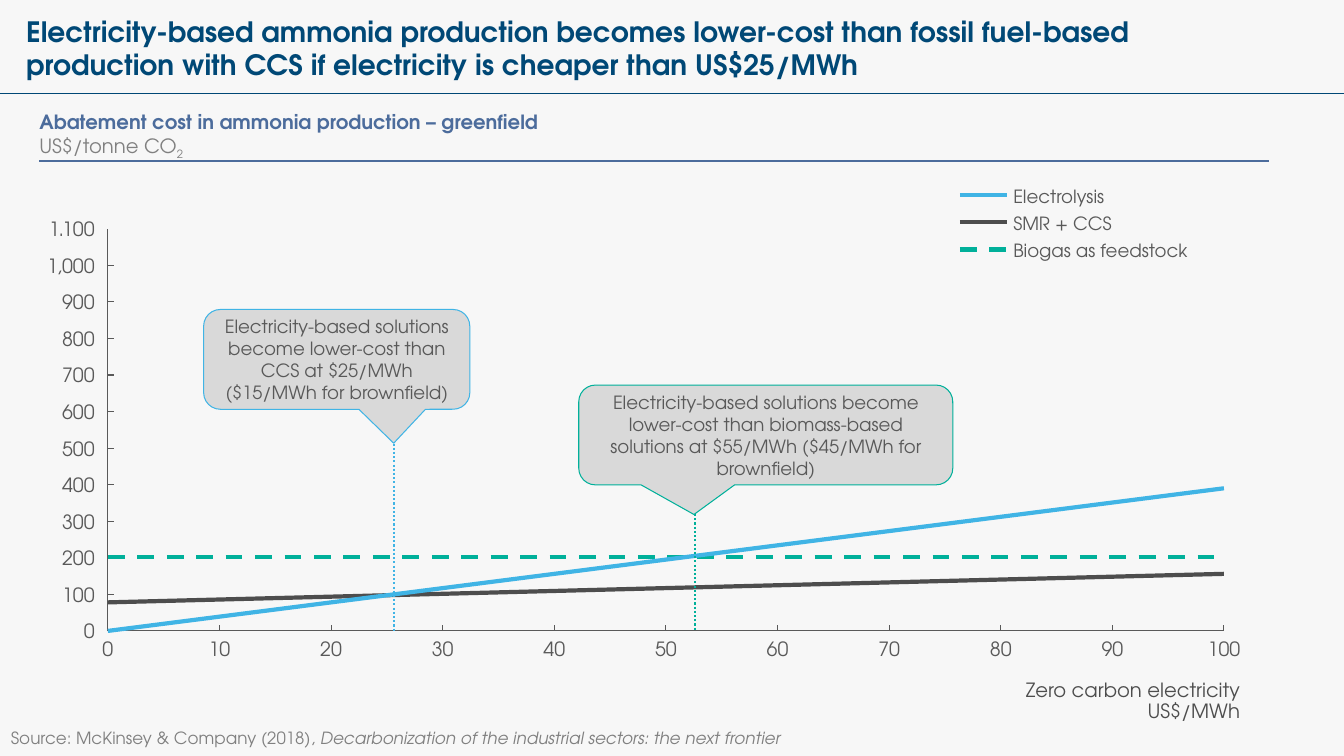
from lxml import etree
from pptx import Presentation
from pptx.chart.data import XyChartData
from pptx.dml.color import RGBColor
from pptx.enum.chart import XL_CHART_TYPE, XL_TICK_LABEL_POSITION, XL_TICK_MARK
from pptx.enum.dml import MSO_LINE
from pptx.enum.shapes import MSO_CONNECTOR, MSO_SHAPE
from pptx.enum.text import MSO_ANCHOR, MSO_AUTO_SIZE, PP_ALIGN
from pptx.oxml.ns import qn
from pptx.util import Pt

SCATTER = XL_CHART_TYPE.XY_SCATTER_LINES_NO_MARKERS
NO_LABELS = XL_TICK_LABEL_POSITION.NONE
TICK_INSIDE, TICK_NONE = XL_TICK_MARK.INSIDE, XL_TICK_MARK.NONE
DASH, DOTS = MSO_LINE.DASH, MSO_LINE.ROUND_DOT
STRAIGHT = MSO_CONNECTOR.STRAIGHT
CALLOUT = MSO_SHAPE.ROUNDED_RECTANGULAR_CALLOUT
TOP, MIDDLE, BOTTOM = MSO_ANCHOR.TOP, MSO_ANCHOR.MIDDLE, MSO_ANCHOR.BOTTOM
LEFT, CENTER, RIGHT = PP_ALIGN.LEFT, PP_ALIGN.CENTER, PP_ALIGN.RIGHT

EMU_PER_PX = 9144
FONT = "TeX Gyre Adventor"
NAVY, STEEL, GRAY, DARK, SILVER = "004876", "4C6C9C", "595959", "4D4D4D", "808080"
BLUE, GREEN = "40B4E5", "00B09A"
PLOT = (107, 227, 1107, 399)
AXIS_TOP = 282
COST_LABELS = ["0", "100", "200", "300", "400", "500", "600", "700", "800",
               "900", "1,000", "1.100"]
SERIES = [
    ("Electrolysis", BLUE, None, (0, 50, 100)),
    ("SMR + CCS", DARK, None, (20, 30, 40)),
    ("Biogas as feedstock", GREEN, DASH, (52, 52, 52)),
]
CALLOUTS = [
    ((202, 307, 264, 99), BLUE, 391, 440, (0.214, 0.84, 0.167),
     "Electricity-based solutions become lower-cost than CCS at $25/MWh "
     "($15/MWh for brownfield)"),
    ((574, 382, 371, 99), GREEN, 689, 510, (-0.192, 0.797, 0.167),
     "Electricity-based solutions become lower-cost than biomass-based "
     "solutions at $55/MWh ($45/MWh for brownfield)"),
]


def px(*lengths):
    return [round(length * EMU_PER_PX) for length in lengths]


def color(value):
    return RGBColor.from_string(value)


def style_line(line, value, width, dash=None):
    line.color.rgb = color(value)
    line.width = Pt(width)
    if dash:
        line.dash_style = dash


def add_line(slide, start, end, value, width, dash=None):
    connector = slide.shapes.add_connector(STRAIGHT, *px(*start, *end))
    style_line(connector.line, value, width, dash)
    etree.SubElement(connector._element.spPr, qn("a:effectLst"))


def add_run(paragraph, text, size, value, bold=False, italic=False):
    run = paragraph.add_run()
    run.text = text
    font = run.font
    font.name, font.size, font.bold, font.italic = FONT, Pt(size), bold, italic
    font.color.rgb = color(value)
    return run


def set_frame(frame, anchor=TOP, wrap=True, margins=(0, 0, 0, 0)):
    frame.auto_size = MSO_AUTO_SIZE.NONE
    frame.word_wrap = wrap
    frame.vertical_anchor = anchor
    (frame.margin_left, frame.margin_top,
     frame.margin_right, frame.margin_bottom) = px(*margins)


def add_text(slide, box, lines, size, value, align=LEFT, anchor=TOP, spacing=None):
    frame = slide.shapes.add_textbox(*px(*box)).text_frame
    set_frame(frame, anchor, wrap=False)
    for index, text in enumerate(lines):
        paragraph = frame.add_paragraph() if index else frame.paragraphs[0]
        paragraph.alignment = align
        paragraph.line_spacing = spacing
        add_run(paragraph, text, size, value)


def add_title(slide, box):
    title = slide.shapes.title
    title.left, title.top, title.width, title.height = px(*box)
    set_frame(title.text_frame)
    paragraph = title.text_frame.paragraphs[0]
    paragraph.alignment = LEFT
    add_run(paragraph, "Electricity-based ammonia production becomes lower-cost than "
            "fossil fuel-based production with CCS if electricity is cheaper than "
            "US$25/MWh", 20, NAVY, bold=True)
    add_line(slide, (0, 93), (1333, 93), NAVY, 0.75)


def add_chart_heading(slide, box):
    left, top, width, height = box
    frame = slide.shapes.add_textbox(*px(*box)).text_frame
    set_frame(frame, BOTTOM, margins=(0, 0, 0, 2))
    add_run(frame.paragraphs[0], "Abatement cost in ammonia production – greenfield",
            14, STEEL, bold=True)
    unit = frame.add_paragraph()
    add_run(unit, "US$/tonne CO", 14, SILVER)
    subscript = add_run(unit, "2", 14, SILVER)
    subscript._r.get_or_add_rPr().set("baseline", "-25000")
    bottom = top + height - 1
    add_line(slide, (left, bottom), (left + width, bottom), STEEL, 1.5)


def style_axis(axis, maximum, step):
    axis.minimum_scale, axis.maximum_scale, axis.major_unit = 0, maximum, step
    axis.has_major_gridlines = False
    axis.major_tick_mark, axis.minor_tick_mark = TICK_INSIDE, TICK_NONE
    axis.tick_label_position = NO_LABELS
    style_line(axis.format.line, GRAY, 0.75)


def set_plot_area(chart, fractions):
    plot_area = chart._chartSpace.find(".//" + qn("c:plotArea"))
    for layout in plot_area.findall(qn("c:layout")):
        plot_area.remove(layout)
    layout = etree.Element(qn("c:layout"))
    manual = etree.SubElement(layout, qn("c:manualLayout"))
    settings = [("layoutTarget", "inner"), ("xMode", "edge"), ("yMode", "edge")]
    settings += zip("xywh", fractions)
    for name, value in settings:
        etree.SubElement(manual, qn("c:" + name)).set("val", str(value))
    plot_area.insert(0, layout)


def add_cost_chart(slide, box):
    left, top, width, height = box
    data = XyChartData()
    for name, _, _, costs in SERIES:
        series = data.add_series(name)
        for price, cost in zip((0, 50, 100), costs):
            series.add_data_point(price, cost)
    chart = slide.shapes.add_chart(SCATTER, *px(*box), data).chart
    chart.has_legend = chart.has_title = False
    chart.font.name, chart.font.size = FONT, Pt(10)
    chart.font.color.rgb = color(GRAY)
    chart.plots[0].vary_by_categories = False
    style_axis(chart.category_axis, 100, 10)
    style_axis(chart.value_axis, AXIS_TOP, round(AXIS_TOP / 11, 2))
    for series, (_, value, dash, _) in zip(chart.plots[0].series, SERIES):
        series.smooth = False
        style_line(series.format.line, value, 3, dash)
    plot_left, plot_top, plot_width, plot_height = PLOT
    set_plot_area(chart, ((plot_left - left) / width, (plot_top - top) / height,
                          plot_width / width, plot_height / height))


def add_axis_labels(slide, box):
    left, top, width, height = box
    for index in range(11):
        text = str(index * 10)
        label_width = 11 * len(text)
        center = left + width * index / 10
        add_text(slide, (center - label_width / 2, top + height + 8, label_width, 21),
                 [text], 14, GRAY, CENTER, spacing=0.9)
    for index, text in enumerate(COST_LABELS):
        label_width = 48 if len(text) == 5 else 11 * len(text)
        middle = top + height * (1 - index / 11)
        add_text(slide, (left - 13 - label_width, middle - 11, label_width, 22),
                 [text], 14, GRAY, RIGHT, MIDDLE)
    add_text(slide, (left + width - 196, top + height + 49, 212, 42),
             ["Zero carbon electricity", "US$/MWh"], 14, DARK, RIGHT, spacing=0.9)


def add_legend(slide, box):
    left, top, width, height = box
    row_height = height / len(SERIES)
    for index, (name, value, dash, _) in enumerate(SERIES):
        middle = top + row_height * (index + 0.5)
        add_line(slide, (left, middle), (left + 47, middle), value, 3, dash)
        add_text(slide, (left + 53, middle - 10, width - 53, 22), [name], 13, GRAY,
                 anchor=MIDDLE)


def add_callout(slide, box, value, marker, tip, adjustments, text):
    add_line(slide, (marker, tip), (marker, PLOT[1] + PLOT[3]), value, 1.5, DOTS)
    callout = slide.shapes.add_shape(CALLOUT, *px(*box))
    callout.shadow.inherit = False
    for index, adjustment in enumerate(adjustments):
        callout.adjustments[index] = adjustment
    callout.fill.solid()
    callout.fill.fore_color.rgb = color("D9D9D9")
    style_line(callout.line, value, 0.75)
    set_frame(callout.text_frame, MIDDLE, margins=(10, 5, 10, 5))
    paragraph = callout.text_frame.paragraphs[0]
    paragraph.alignment = CENTER
    add_run(paragraph, text, 13, GRAY)


def add_source(slide, box):
    frame = slide.shapes.add_textbox(*px(*box)).text_frame
    set_frame(frame, margins=(10, 5, 10, 5))
    paragraph = frame.paragraphs[0]
    add_run(paragraph, "Source: McKinsey & Company (2018), ", 12, SILVER)
    add_run(paragraph, "Decarbonization of the industrial sectors: the next frontier",
            12, SILVER, italic=True)


def main():
    presentation = Presentation()
    presentation.slide_width, presentation.slide_height = px(1333, 750)
    slide = presentation.slides.add_slide(presentation.slide_layouts[5])
    slide.background.fill.solid()
    slide.background.fill.fore_color.rgb = color("F7F7F7")
    add_title(slide, (26, 14, 1100, 67))
    add_chart_heading(slide, (39, 112, 1220, 49))
    add_cost_chart(slide, (98, 218, 1125, 417))
    add_axis_labels(slide, PLOT)
    add_legend(slide, (952, 180, 227, 81))
    for callout in CALLOUTS:
        add_callout(slide, *callout)
    add_source(slide, (1, 717, 1288, 30))
    presentation.save("out.pptx")


if __name__ == "__main__":
    main()
